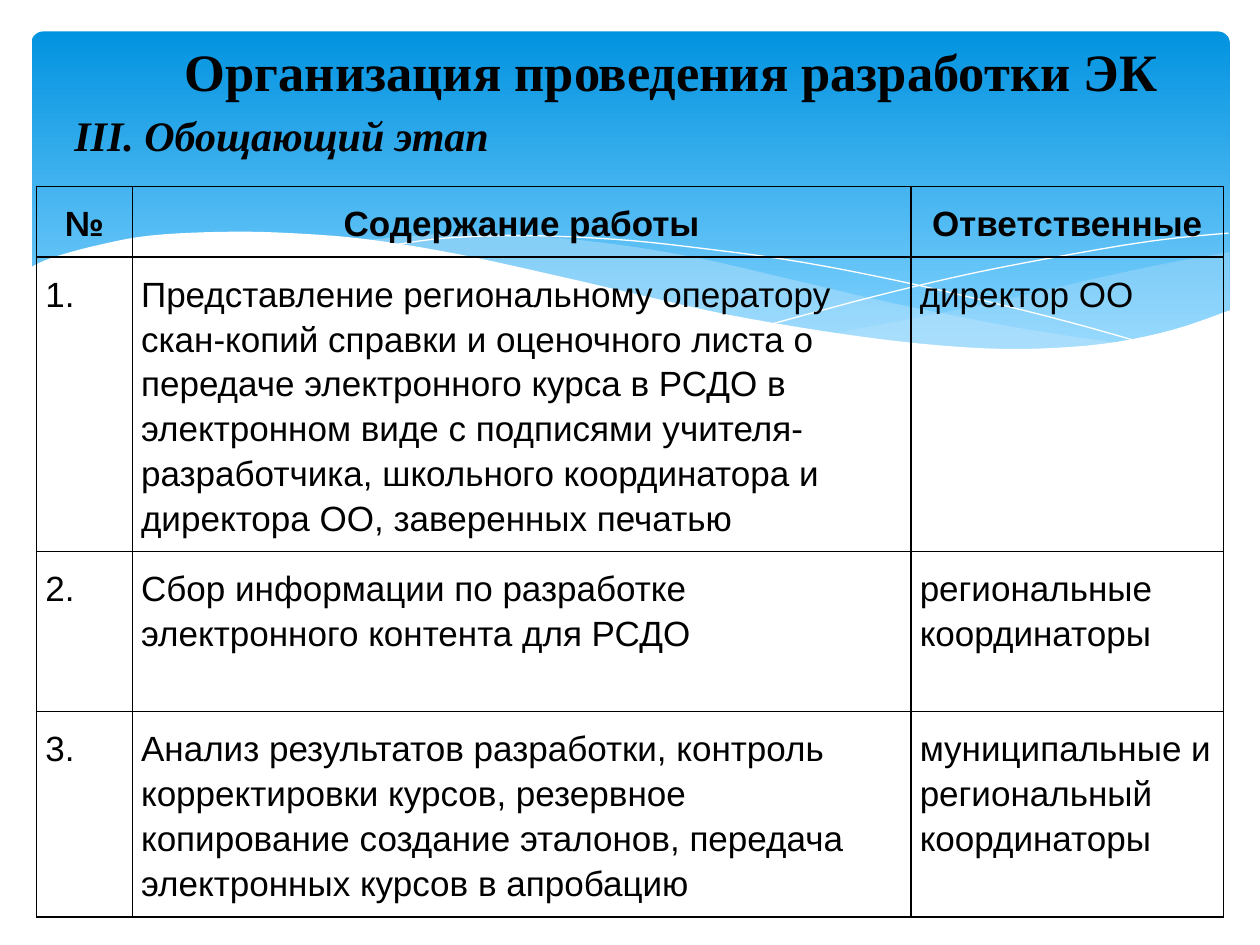
from dataclasses import dataclass

from lxml import etree
from pptx import Presentation
from pptx.dml.color import RGBColor
from pptx.enum.shapes import MSO_SHAPE
from pptx.enum.text import MSO_ANCHOR, PP_ALIGN
from pptx.oxml.ns import qn
from pptx.util import Inches, Pt

ROUND = MSO_SHAPE.ROUNDED_RECTANGLE
LEFT, CENTER, JUST = PP_ALIGN.LEFT, PP_ALIGN.CENTER, PP_ALIGN.JUSTIFY
MIDDLE = MSO_ANCHOR.MIDDLE
BLACK, WHITE, PALE = "000000", "FFFFFF", "C6E7FC"
SPACING = 1.15
Point = tuple[float, float]


@dataclass
class Wave:
    """An outline of smooth curves joined by straight edges."""
    curves: list[list[Point]]
    fill: str = ""
    alpha: int = 100


@dataclass
class Row:
    height: float
    texts: tuple[str, str, str]
    aligns: tuple = (JUST, LEFT, LEFT)
    bold: bool = False


WAVES = [
    Wave([[(9.76, 2), (9.21, 2.1), (8.61, 2.23), (7.79, 2.42), (6.61, 2.65)],
          [(6.61, 2.65), (7.19, 2.72), (7.69, 2.77), (8.14, 2.78),
           (8.63, 2.75), (9.13, 2.67), (9.49, 2.57), (9.76, 2.47)]],
         PALE, 29),
    Wave([[(8.93, 2.73), (8.07, 2.6), (7.06, 2.4), (6.29, 2.22), (5.55, 2.05),
           (4.89, 1.94), (4.2, 1.87), (3.61, 1.85), (2.86, 1.91)],
          [(2.86, 1.91), (3.62, 2.03), (4.49, 2.22), (5.3, 2.4), (6.01, 2.55),
           (6.65, 2.66), (7.22, 2.74), (7.73, 2.77), (8.28, 2.78),
           (8.93, 2.73)]],
         PALE, 40),
    Wave([[(3.09, 1.95), (3.53, 1.89), (4.16, 1.87), (4.89, 1.9), (5.56, 1.97),
           (6.36, 2.08), (7.27, 2.26), (8.31, 2.51), (9.07, 2.72)]]),
    Wave([[(6.13, 2.57), (6.95, 2.35), (7.76, 2.16), (8.66, 1.99),
           (9.24, 1.9), (9.75, 1.85)]]),
    Wave([[(9.77, 2.46), (9.3, 2.62), (8.75, 2.73), (8.09, 2.77), (7.44, 2.74),
           (6.68, 2.65), (5.79, 2.5), (5.03, 2.33), (4.47, 2.2), (3.65, 2.02),
           (2.92, 1.9), (2.3, 1.85), (1.77, 1.84), (1.19, 1.87), (0.76, 1.95),
           (0.4, 2.05), (0.23, 2.13)],
          [(0.23, 3.29), (9.77, 3.29)]],
         WHITE),
]

COLS = (0.76, 6.18, 2.48)
ROWS = [
    Row(0.56, ("№", "Содержание работы", "Ответственные"),
        (CENTER, CENTER, CENTER), True),
    Row(2.33, ("1.",
               "Представление региональному оператору скан-копий справки и "
               "оценочного листа о передаче электронного курса в РСДО в "
               "электронном виде с подписями учителя- разработчика, школьного "
               "координатора и директора ОО, заверенных печатью",
               "директор ОО")),
    Row(1.27, ("2.",
               "Сбор информации по разработке электронного контента для РСДО",
               "региональные координаторы")),
    Row(1.63, ("3.",
               "Анализ результатов разработки, контроль корректировки курсов, "
               "резервное копирование создание эталонов, передача электронных "
               "курсов в апробацию",
               "муниципальные и региональный координаторы")),
]


def color(code: str) -> RGBColor:
    return RGBColor.from_string(code)


def smooth(points: list[Point], steps: int = 5) -> list[Point]:
    """Sample a Catmull-Rom spline that runs through the points."""
    if len(points) < 3:
        return points
    ends = [points[0], *points, points[-1]]
    out = [points[0]]
    for a, b, c, d in zip(ends, ends[1:], ends[2:], ends[3:]):
        for step in range(1, steps + 1):
            t = step / steps
            x, y = (
                q + t / 2 * (r - p + t * (2 * p - 5 * q + 4 * r - s
                                          + t * (3 * (q - r) + s - p)))
                for p, q, r, s in zip(a, b, c, d))
            out.append((x, y))
    return out


def draw_wave(shapes, wave: Wave) -> None:
    # The builder rounds to whole units, so points go in as EMU
    points = [(Inches(x), Inches(y))
              for curve in wave.curves for x, y in smooth(curve)]
    pen = shapes.build_freeform(*points[0])
    pen.add_line_segments(points[1:], close=bool(wave.fill))
    shape = pen.convert_to_shape()
    shape.shadow.inherit = False
    if not wave.fill:
        shape.fill.background()
        shape.line.color.rgb = color(WHITE)
        shape.line.width = Pt(0.75)
        return
    shape.line.fill.background()
    shape.fill.solid()
    shape.fill.fore_color.rgb = color(wave.fill)
    if wave.alpha < 100:
        tint = shape.fill._xPr.find(qn("a:solidFill")).find(qn("a:srgbClr"))
        etree.SubElement(tint, qn("a:alpha"), val=str(wave.alpha * 1000))


def draw_sky(shapes) -> None:
    sky = shapes.add_shape(ROUND, Inches(0.25), Inches(0.25),
                           Inches(9.51), Inches(2.7))
    sky.adjustments[0] = 0.034
    sky.shadow.inherit = False
    sky.line.fill.background()
    sky.fill.gradient()
    sky.fill.gradient_angle = 270
    stops = zip(sky.fill.gradient_stops, (("0293E0", 0), ("81D2FE", 0.9)))
    for stop, (code, place) in stops:
        stop.color.rgb = color(code)
        stop.position = place


def style(para, size: float, face: str, align, bold: bool,
          italic: bool = False) -> None:
    para.alignment = align
    para.line_spacing = SPACING
    for run in para.runs:
        font = run.font
        font.size, font.name = Pt(size), face
        font.bold, font.italic = bold, italic
        font.color.rgb = color(BLACK)


def set_title(slide) -> None:
    title = slide.shapes.title
    title.left, title.top = Inches(0.49), Inches(0.2)
    title.width, title.height = Inches(9.29), Inches(1.1)
    frame = title.text_frame
    frame.word_wrap = True
    frame.vertical_anchor = MIDDLE
    frame.text = "Организация проведения разработки ЭК\nIII. Обощающий этап"
    head, stage = frame.paragraphs
    face = "Times New Roman"
    style(head, 30, face, CENTER, True)
    head._p.get_or_add_pPr().set("indent", str(Inches(0.39)))
    style(stage, 24, face, JUST, True, True)
    # Bring the title in front of the backdrop
    slide.shapes._spTree.append(title._element)


def add_border(cell) -> None:
    props = cell._tc.get_or_add_tcPr()
    for side in ("lnL", "lnR", "lnT", "lnB"):
        line = etree.SubElement(props, qn("a:" + side), w=str(Pt(1)))
        fill = etree.SubElement(line, qn("a:solidFill"))
        etree.SubElement(fill, qn("a:srgbClr"), val=BLACK)


def draw_table(shapes) -> None:
    high = sum(row.height for row in ROWS)
    frame = shapes.add_table(len(ROWS), len(COLS), Inches(0.29), Inches(1.48),
                             Inches(sum(COLS)), Inches(high))
    table = frame.table
    table.first_row = table.horz_banding = False
    for col, width in zip(table.columns, COLS):
        col.width = Inches(width)
    for line, row in zip(table.rows, ROWS):
        line.height = Inches(row.height)
        for cell, text, align in zip(line.cells, row.texts, row.aligns):
            add_border(cell)
            cell.fill.background()
            cell.margin_left = cell.margin_right = Inches(0.07)
            cell.margin_top = cell.margin_bottom = Inches(0.1)
            cell.text_frame.text = text
            style(cell.text_frame.paragraphs[0], 20, "Arial", align, row.bold)


def main() -> None:
    deck = Presentation()
    deck.slide_width, deck.slide_height = Inches(10), Inches(7.5)
    slide = deck.slides.add_slide(deck.slide_layouts[5])
    draw_sky(slide.shapes)
    for wave in WAVES:
        draw_wave(slide.shapes, wave)
    set_title(slide)
    draw_table(slide.shapes)
    deck.save("out.pptx")


if __name__ == "__main__":
    main()
